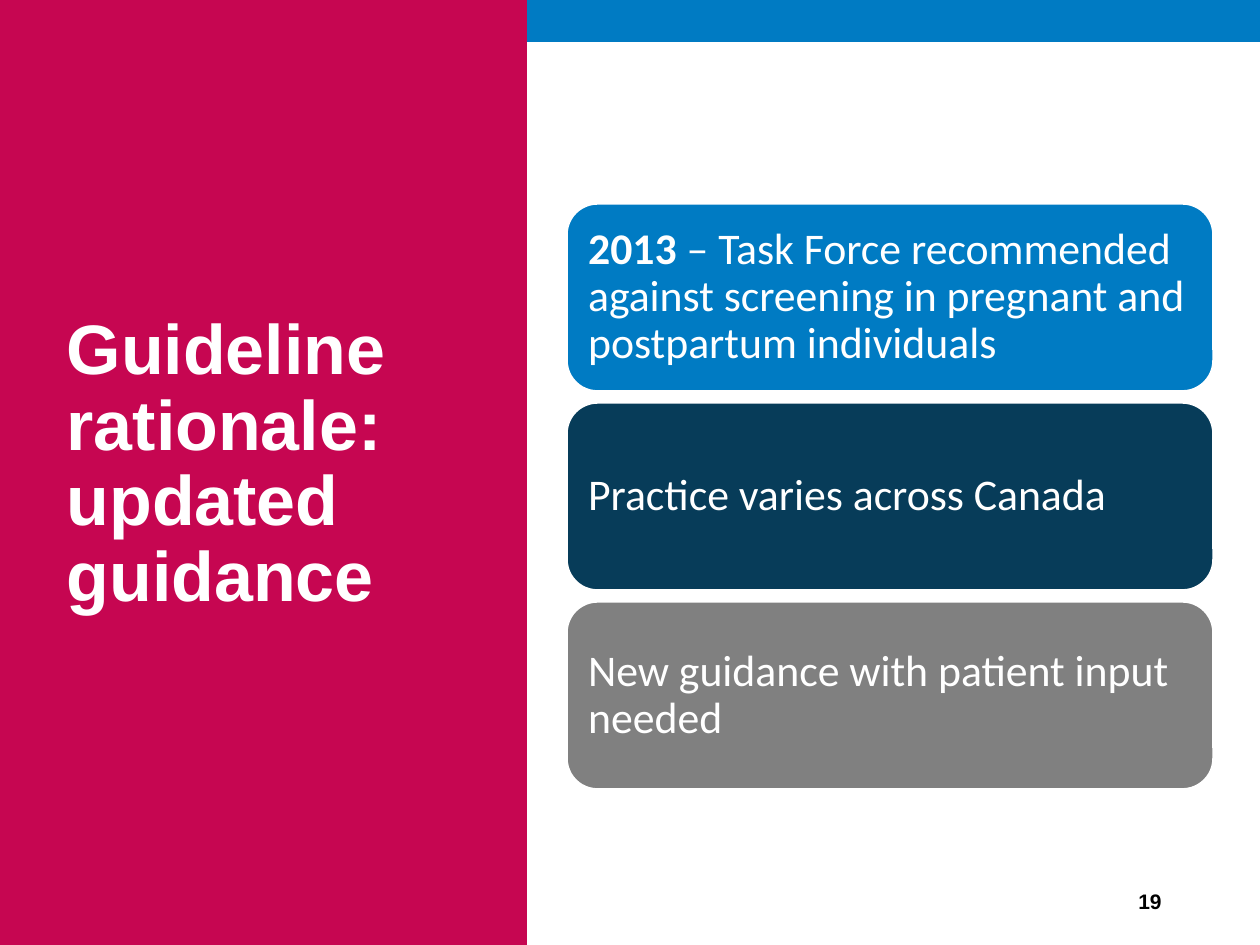
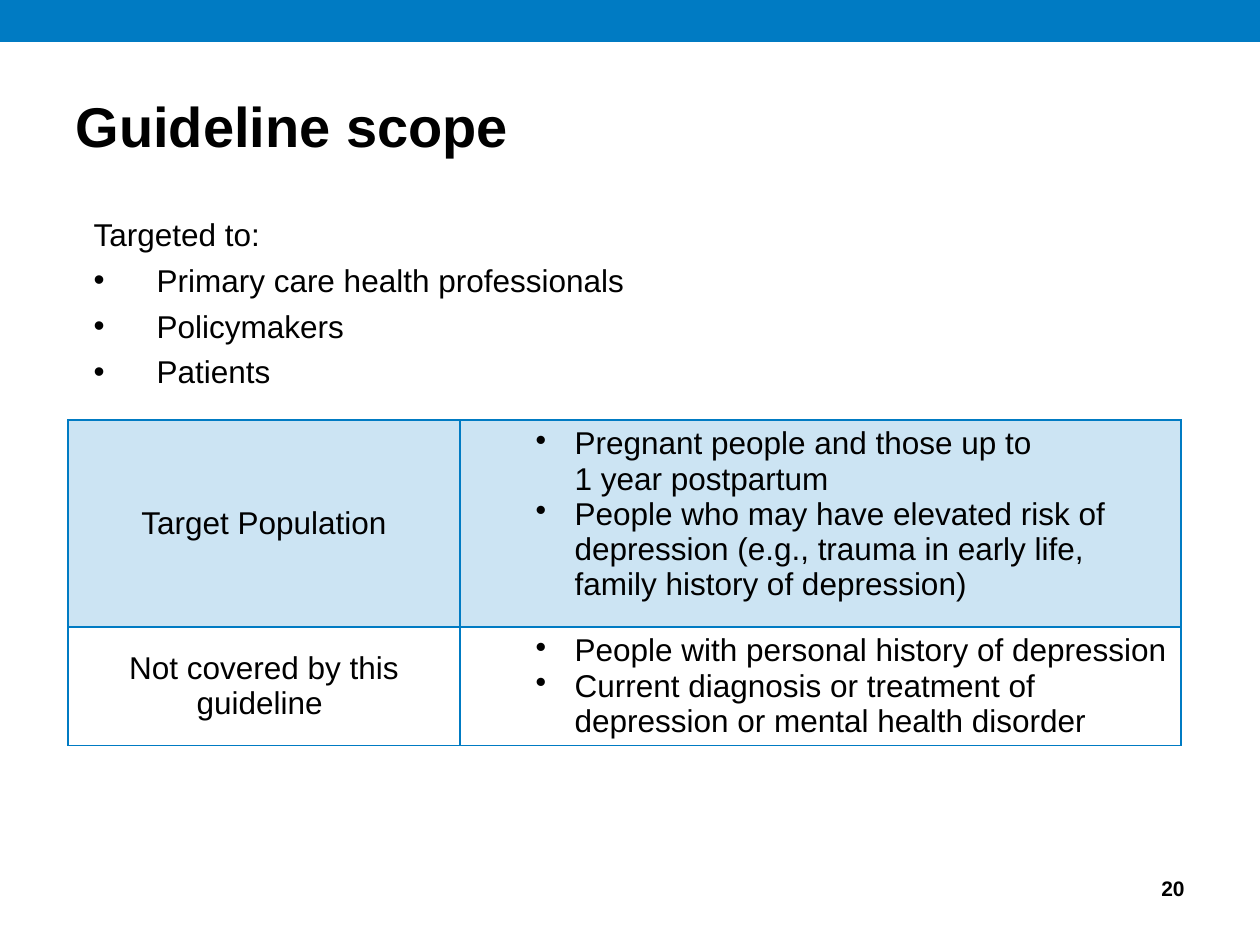
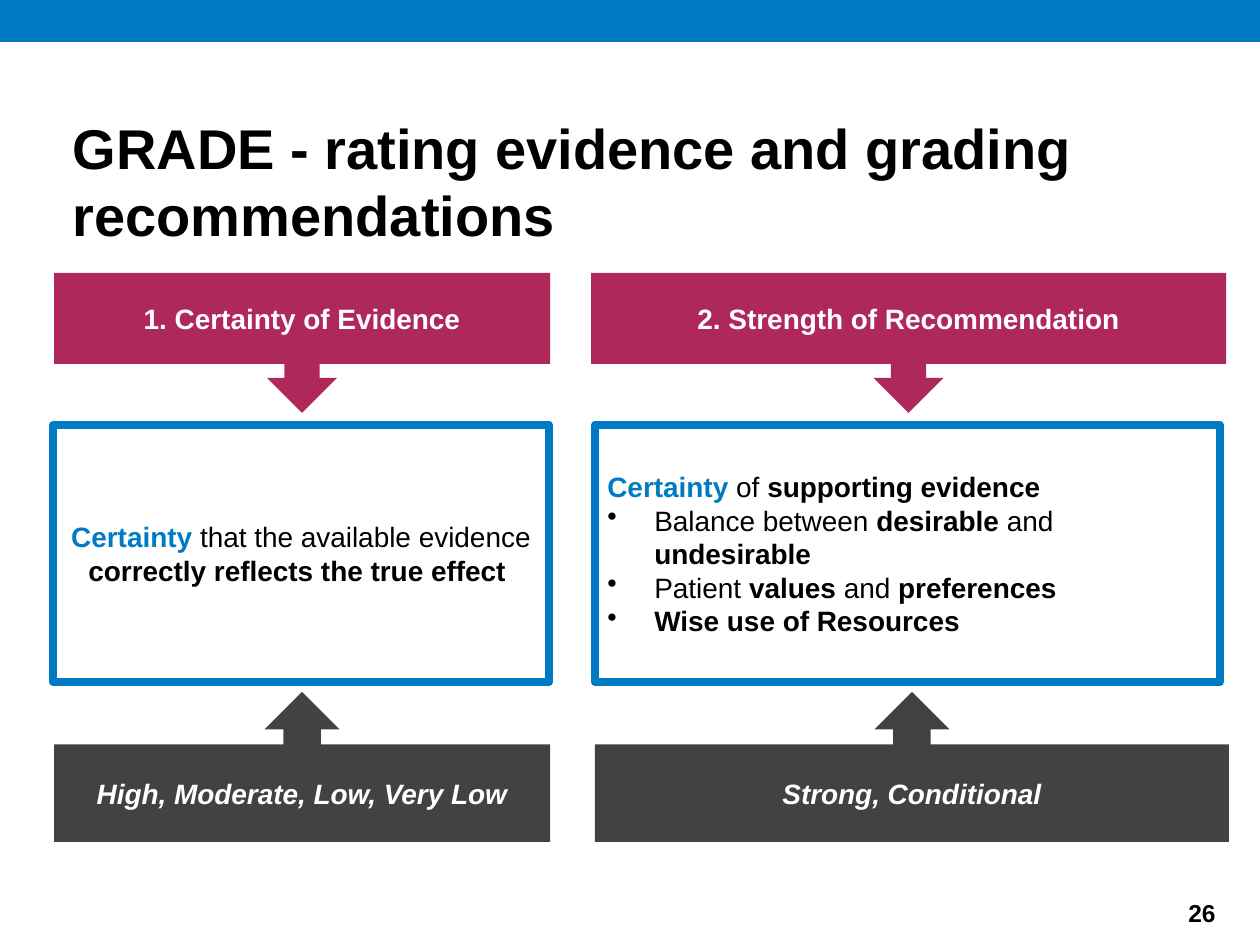
from dataclasses import dataclass
from typing import NamedTuple, Optional

import pptx
import pptx.dml.color
import pptx.enum.shapes
import pptx.enum.text
import pptx.oxml
import pptx.oxml.ns
import pptx.util

SHAPE = pptx.enum.shapes.MSO_SHAPE
ALIGN = pptx.enum.text.PP_ALIGN
ANCHOR = pptx.enum.text.MSO_ANCHOR
PX_PER_INCH = 126
TITLE_AND_BODY, TITLE_ONLY = 1, 5


@dataclass(frozen=True)
class Theme:
    blue: str = "007BC3"
    crimson: str = "C60651"
    berry: str = "AE285B"
    navy: str = "073C59"
    grey: str = "808080"
    black: str = "000000"
    white: str = "FFFFFF"
    font: str = "Arial"
    card_font: str = "Calibri"
    panel_title: float = 40
    title: float = 32
    card: float = 25
    body: float = 18
    diagram: float = 16
    number: float = 12
    last_number: float = 14


THEME = Theme()


class Box(NamedTuple):
    left: int
    top: int
    width: int
    height: int


class Run(NamedTuple):
    text: str
    bold: bool = False
    color: Optional[str] = None
    italic: bool = False


BREAK = Run("")


@dataclass(frozen=True)
class Para:
    runs: tuple[Run, ...]
    align: ALIGN = ALIGN.LEFT
    indent: int = 0
    hang: int = 0
    line_spacing: float = 1.0
    before: float = 0


@dataclass(frozen=True)
class Style:
    size: float
    color: str = THEME.black
    font: str = THEME.font


@dataclass(frozen=True)
class Look:
    fill: Optional[str] = None
    alpha: int = 100
    line: Optional[str] = None
    line_width: float = 0


def px(length: int) -> int:
    return round(length * 914400 / PX_PER_INCH)


def emu(box: Box) -> list[int]:
    return [px(length) for length in box]


def rgb(color: str) -> pptx.dml.color.RGBColor:
    return pptx.dml.color.RGBColor.from_string(color)


def paint(fill, color: Optional[str], alpha: int = 100) -> None:
    if color is None:
        fill.background()
        return
    fill.solid()
    fill.fore_color.rgb = rgb(color)
    if alpha < 100:
        srgb = fill._xPr.find(".//" + pptx.oxml.ns.qn("a:srgbClr"))
        opacity = pptx.oxml.parse_xml(f'<a:alpha {pptx.oxml.ns.nsdecls("a")} val="{alpha * 1000}"/>')
        srgb.append(opacity)


# Text

def set_bullet(paragraph, para: Para) -> None:
    props = paragraph._p.get_or_add_pPr()
    props.set("marL", str(px(para.indent)))
    props.set("indent", str(-px(para.hang)))
    mark = 'buChar {} char="•"' if para.hang else "buNone {}"
    props.append(pptx.oxml.parse_xml(f'<a:{mark.format(pptx.oxml.ns.nsdecls("a"))}/>'))


def write(frame, paras: list[Para], style: Style, anchor=ANCHOR.MIDDLE) -> None:
    frame.word_wrap = True
    frame.vertical_anchor = anchor
    for index, para in enumerate(paras):
        paragraph = frame.add_paragraph() if index else frame.paragraphs[0]
        set_bullet(paragraph, para)
        paragraph.alignment = para.align
        paragraph.line_spacing = para.line_spacing
        paragraph.space_before = pptx.util.Pt(para.before)
        for part in para.runs:
            if part is BREAK:
                paragraph.add_line_break()
                continue
            run = paragraph.add_run()
            run.text = part.text
            run.font.name = style.font
            run.font.size = pptx.util.Pt(style.size)
            run.font.bold = part.bold
            run.font.italic = part.italic
            run.font.color.rgb = rgb(part.color or style.color)


# Shared parts

def draw(slide, kind, box: Box, look: Look):
    shape = slide.shapes.add_shape(kind, *emu(box))
    shape.shadow.inherit = False
    paint(shape.fill, look.fill, look.alpha)
    paint(shape.line.fill, look.line)
    if look.line:
        shape.line.width = pptx.util.Pt(look.line_width)
    return shape


def fill_placeholder(holder, box: Box, paras: list[Para], style: Style, anchor=ANCHOR.MIDDLE) -> None:
    holder.left, holder.top, holder.width, holder.height = emu(box)
    holder.text_frame.auto_size = pptx.enum.text.MSO_AUTO_SIZE.NONE
    write(holder.text_frame, paras, style, anchor)


def add_title(slide, box: Box, text: str) -> None:
    fill_placeholder(slide.shapes.title, box, [Para((Run(text, bold=True),))], Style(THEME.title))


def add_number(slide, box: Box, number: int, size: float = THEME.number) -> None:
    frame = slide.shapes.add_textbox(*emu(box)).text_frame
    write(frame, [Para((Run(str(number), bold=True),), ALIGN.RIGHT)], Style(size))


def start_slide(deck, layout: int):
    slide = deck.slides.add_slide(deck.slide_layouts[layout])
    draw(slide, SHAPE.RECTANGLE, Box(0, 0, 1260, 42), Look(THEME.blue))
    return slide


def bulleted(*runs: Run, indent: int, hang: int, before: float = 0) -> Para:
    return Para(runs, indent=indent, hang=hang, before=before)


# Slide: rationale

def build_rationale(deck) -> None:
    slide = start_slide(deck, TITLE_ONLY)
    panel = draw(slide, SHAPE.RECTANGLE, Box(0, 0, 527, 945), Look(THEME.crimson))
    title = slide.shapes.title
    panel._element.addnext(title._element)
    heading = Para((Run("Guideline rationale: updated guidance", bold=True),), line_spacing=0.9)
    fill_placeholder(title, Box(54, 86, 393, 759), [heading], Style(THEME.panel_title, THEME.white))

    cards = [
        (THEME.blue, (Run("2013", bold=True),
                      Run(" – Task Force recommended against screening in pregnant and postpartum individuals"))),
        (THEME.navy, (Run("Practice varies across Canada"),)),
        (THEME.grey, (Run("New guidance with patient input needed"),)),
    ]
    for row, (color, runs) in enumerate(cards):
        card = draw(slide, SHAPE.ROUNDED_RECTANGLE, Box(566, 203 + row * 199, 648, 189),
                    Look(color, line=THEME.white, line_width=2))
        frame = card.text_frame
        frame.margin_left = frame.margin_right = frame.margin_top = frame.margin_bottom = px(13)
        write(frame, [Para(runs, line_spacing=0.9)], Style(THEME.card, THEME.white, THEME.card_font))
    add_number(slide, Box(890, 876, 284, 50), 19)


# Slide: scope

def border_cell(cell) -> None:
    props = cell._tc.get_or_add_tcPr()
    for index, side in enumerate(("lnL", "lnR", "lnT", "lnB")):
        props.insert(index, pptx.oxml.parse_xml(
            f'<a:{side} {pptx.oxml.ns.nsdecls("a")} w="12700"><a:solidFill>'
            f'<a:srgbClr val="{THEME.blue}"/></a:solidFill></a:{side}>'))


def build_scope(deck) -> None:
    slide = start_slide(deck, TITLE_AND_BODY)
    add_title(slide, Box(63, 73, 1134, 105), "Guideline scope")

    audiences = ["Primary care health professionals", "Policymakers", "Patients"]
    targets = [Para((Run("Targeted to:"),))]
    targets += [bulleted(Run(name), indent=63, hang=63, before=4.5) for name in audiences]
    style = Style(THEME.body)
    fill_placeholder(slide.placeholders[1], Box(81, 209, 614, 179), targets, style, ANCHOR.TOP)

    populations = [
        ("Target Population", THEME.blue, [
            (Run("Pregnant people and those up to"), BREAK, Run("1 year postpartum")),
            (Run("People who may have elevated risk of depression "
                 "(e.g., trauma in early life, family history of depression)"),),
        ]),
        ("Not covered by this guideline ", None, [
            (Run("People with personal history of depression"),),
            (Run("Current diagnosis or treatment of depression or mental health disorder"),),
        ]),
    ]
    table = slide.shapes.add_table(2, 2, *emu(Box(68, 420, 1113, 325))).table
    table.first_row = table.horz_banding = False
    for column, width in zip(table.columns, (392, 721)):
        column.width = px(width)
    for row, height in zip(table.rows, (207, 118)):
        row.height = px(height)
    for row, (name, color, groups) in enumerate(populations):
        label, details = table.cell(row, 0), table.cell(row, 1)
        write(label.text_frame, [Para((Run(name),), ALIGN.CENTER)], style)
        write(details.text_frame, [bulleted(*runs, indent=102, hang=39) for runs in groups], style)
        label.vertical_anchor, details.vertical_anchor = ANCHOR.MIDDLE, ANCHOR.TOP
        for cell in (label, details):
            paint(cell.fill, color, 20)
            border_cell(cell)
    add_number(slide, Box(903, 863, 294, 50), 20)


# Slide: grading

def build_grading(deck) -> None:
    slide = start_slide(deck, TITLE_ONLY)
    add_title(slide, Box(60, 129, 1124, 104), "GRADE - rating evidence and grading recommendations")

    def centred(*runs: Run) -> list[Para]:
        return [Para(runs, ALIGN.CENTER)]

    def factor(*runs: Run) -> Para:
        return bulleted(*runs, indent=47, hang=47)

    certainty = Run("Certainty ", True, THEME.blue)
    evidence = centred(certainty, Run("that the available evidence "),
                       Run("correctly reflects the true effect ", True))
    strength = [
        Para((certainty, Run("of "), Run("supporting evidence", True))),
        factor(Run("Balance between "), Run("desirable ", True), Run("and "), Run("undesirable", True)),
        factor(Run("Patient"), Run(" values ", True), Run("and "), Run("preferences", True)),
        factor(Run("Wise use of Resources", True)),
    ]
    heading = Look(THEME.berry)
    outline = Look(line=THEME.blue, line_width=4.5)
    rating = Look(THEME.black, alpha=74)
    down, up = SHAPE.DOWN_ARROW_CALLOUT, SHAPE.UP_ARROW_CALLOUT
    parts = [
        (down, Box(54, 273, 496, 140), heading, centred(Run("1. Certainty of Evidence", True))),
        (down, Box(591, 273, 635, 140), heading, centred(Run("2. Strength of Recommendation", True))),
        (SHAPE.RECTANGLE, Box(53, 425, 496, 257), outline, evidence),
        (SHAPE.RECTANGLE, Box(595, 425, 625, 257), outline, strength),
        (up, Box(54, 692, 496, 150), rating, centred(Run("High, Moderate, Low, Very Low", True, italic=True))),
        (up, Box(595, 692, 634, 150), rating, centred(Run("Strong, Conditional", True, italic=True))),
    ]
    for kind, box, look, paras in parts:
        part = draw(slide, kind, box, look)
        write(part.text_frame, paras, Style(THEME.diagram, THEME.white if look.fill else THEME.black))
    add_number(slide, Box(966, 892, 262, 42), 26, THEME.last_number)


def main() -> None:
    deck = pptx.Presentation()
    deck.slide_width, deck.slide_height = px(1260), px(945)
    build_rationale(deck)
    build_scope(deck)
    build_grading(deck)
    deck.save("out.pptx")


if __name__ == "__main__":
    main()
